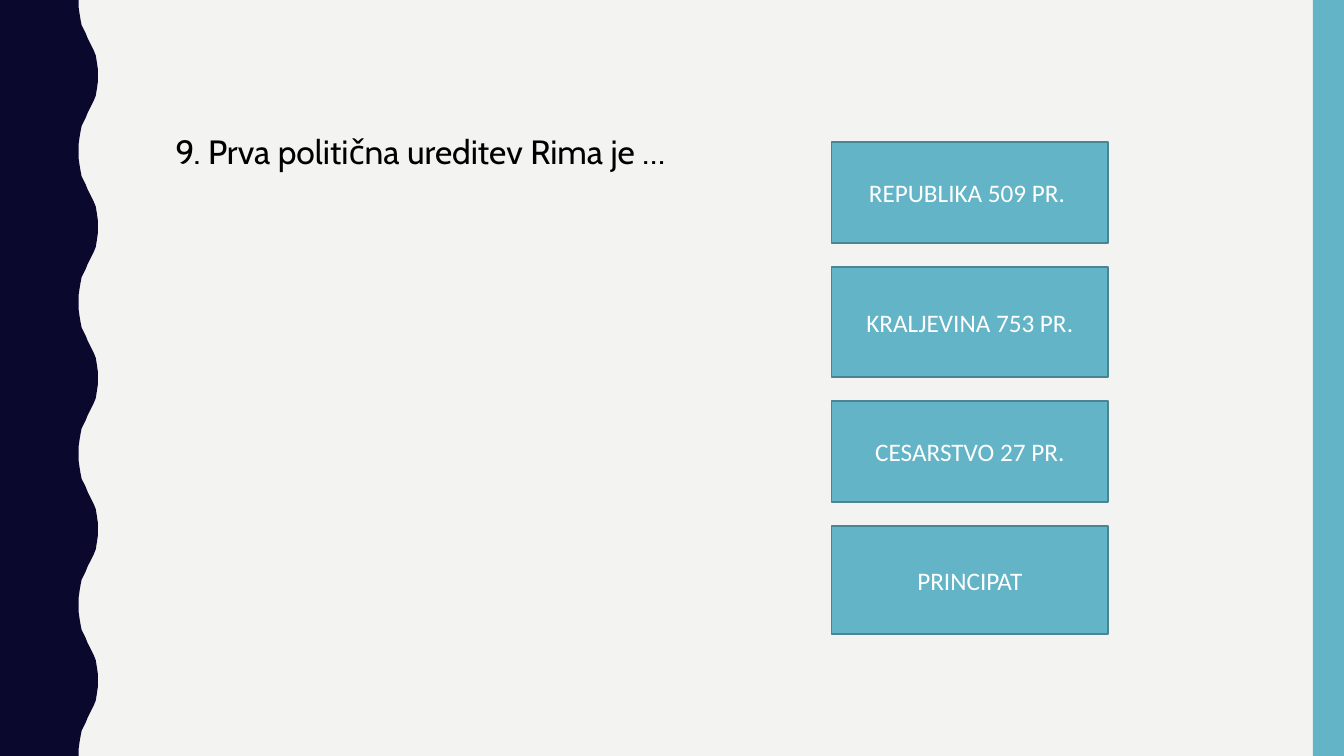
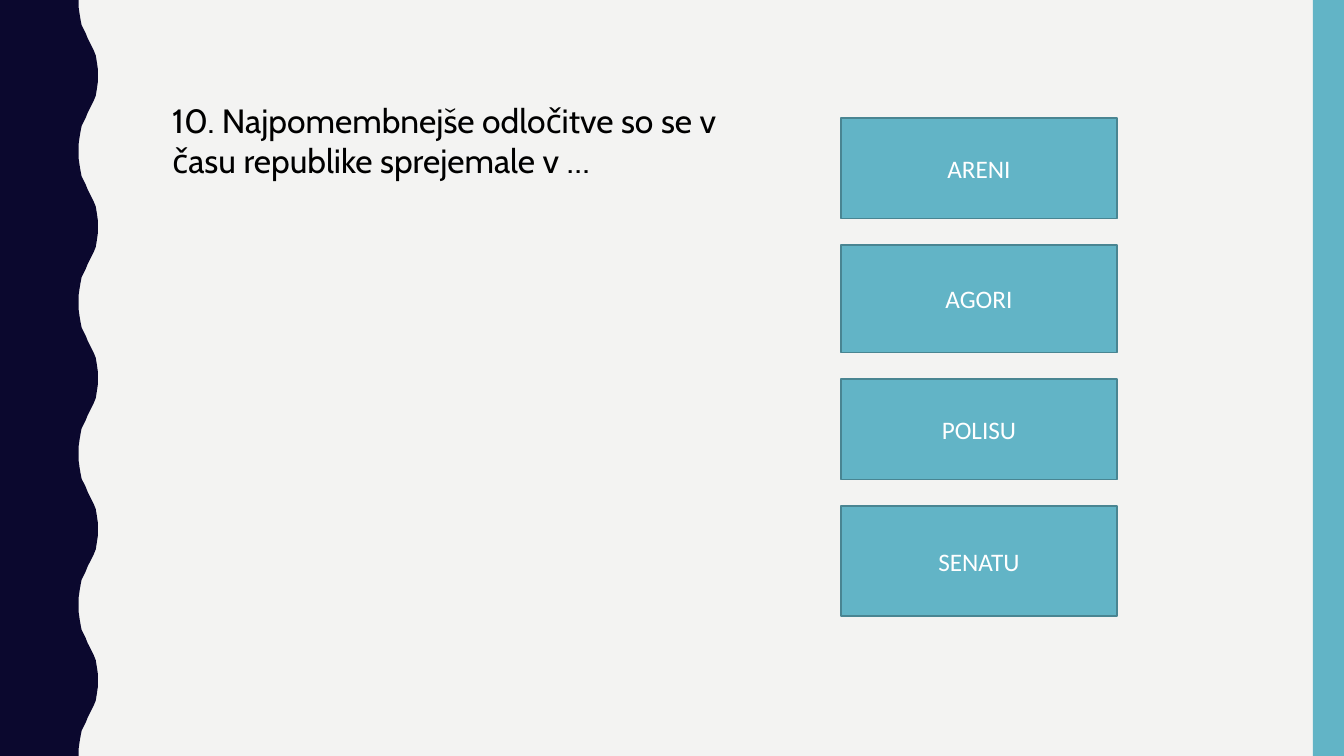
"""Build two quiz slides about the politics of ancient Rome."""
from pptx import Presentation
from pptx import util as u
from pptx.dml.color import RGBColor
from pptx.enum import shapes, text

PAPER = RGBColor(0xF3, 0xF3, 0xF2)
NAVY = RGBColor(0x0B, 0x08, 0x2E)
TEAL = RGBColor(0x62, 0xB4, 0xC6)
TEAL_DARK = RGBColor(0x49, 0x85, 0x92)
WHITE = RGBColor(0xFF, 0xFF, 0xFF)
BLACK = RGBColor(0x00, 0x00, 0x00)

WIDTH, HEIGHT = 13.33, 7.5
STRIP_WIDTH = 0.31
QUESTION_WIDTH = 6.14
ANSWER_WIDTH = 2.74

WAVE_PERIOD = 1.5
WAVE_COUNT = 5
WAVE_RISE = [
    (0.78, 0), (0.78, 0.07), (0.79, 0.14), (0.8, 0.2), (0.81, 0.25),
    (0.83, 0.29), (0.85, 0.33), (0.87, 0.38), (0.89, 0.42), (0.91, 0.46),
    (0.93, 0.5), (0.95, 0.55), (0.96, 0.61), (0.97, 0.68), (0.97, 0.75),
]
WAVE_FALL = [(x, WAVE_PERIOD - y) for x, y in reversed(WAVE_RISE[:-1])]

QUESTION_FONT = {"name": "Cabin", "size": u.Pt(24)}
ANSWER_FONT = {"name": "Calibri", "size": u.Pt(18)}
QUESTION_FRAME = {"word_wrap": True, "auto_size": text.MSO_AUTO_SIZE.SHAPE_TO_FIT_TEXT}
ANSWER_FRAME = {"word_wrap": True, "vertical_anchor": text.MSO_ANCHOR.MIDDLE}

QUIZ = [
    {
        "question": "9. Prva politična ureditev Rima je …",
        "question_box": (1.64, 1.25, 0.5),
        "answers": [("REPUBLIKA 509 PR. ", 1), ("KRALJEVINA 753 PR.", 1.09),
                    ("CESARSTVO 27 PR.", 1), ("PRINCIPAT", 1.07)],
        "answers_at": (8.25, 1.41),
        "gap": 0.24,
    },
    {
        "question": "10. Najpomembnejše odločitve so se v času republike sprejemale v …",
        "question_box": (1.61, 0.94, 0.91),
        "answers": [("ARENI", 1), ("AGORI", 1.07), ("POLISU", 1), ("SENATU", 1.09)],
        "answers_at": (8.34, 1.17),
        "gap": 0.26,
    },
]


def apply_format(target, values):
    """Set every attribute named in values on target."""
    for name, value in values.items():
        setattr(target, name, value)


class QuizDeck:
    """Hold the presentation, its style and the current slide."""

    def __init__(self):
        """Start a wide presentation with a paper background."""
        self.presentation = Presentation()
        self.presentation.slide_width = u.Inches(WIDTH)
        self.presentation.slide_height = u.Inches(HEIGHT)
        fill = self.presentation.slide_master.background.fill
        fill.solid()
        fill.fore_color.rgb = PAPER
        self.slide = None

    def add_slide(self):
        """Add a slide with the wave on the left and the strip on the right."""
        self.slide = self.presentation.slides.add_slide(self.presentation.slide_layouts[6])
        self.add_wave()
        self.add_rectangle(WIDTH - STRIP_WIDTH, 0, STRIP_WIDTH, HEIGHT)

    def paint(self, shape, color, line_color=None):
        """Give a shape a flat fill and an optional thin outline."""
        shape.shadow.inherit = False
        shape.fill.solid()
        shape.fill.fore_color.rgb = color
        if line_color is None:
            shape.line.fill.background()
        else:
            shape.line.color.rgb = line_color
            shape.line.width = u.Pt(1)

    def add_wave(self):
        """Draw the navy band with its wavy right edge."""
        edge = [(x, y + WAVE_PERIOD * index)
                for index in range(WAVE_COUNT) for x, y in WAVE_RISE + WAVE_FALL]
        points = [(u.Inches(x), u.Inches(y)) for x, y in edge + [(0, HEIGHT)]]
        builder = self.slide.shapes.build_freeform(0, 0)
        builder.add_line_segments(points, close=True)
        self.paint(builder.convert_to_shape(), NAVY)

    def add_rectangle(self, left, top, width, height, line_color=None):
        """Draw a teal rectangle and return it."""
        shape = self.slide.shapes.add_shape(
            shapes.MSO_SHAPE.RECTANGLE, *map(u.Inches, (left, top, width, height)))
        self.paint(shape, TEAL, line_color)
        return shape

    def add_wording(self, shape, wording, frame_format, font_format, color, alignment):
        """Put one formatted paragraph into a shape."""
        frame = shape.text_frame
        apply_format(frame, frame_format)
        paragraph = frame.paragraphs[0]
        paragraph.alignment = alignment
        run = paragraph.add_run()
        run.text = wording
        apply_format(run.font, font_format)
        run.font.color.rgb = color

    def add_question(self, wording, left, top, height):
        """Add the question text."""
        box = self.slide.shapes.add_textbox(
            *map(u.Inches, (left, top, QUESTION_WIDTH, height)))
        self.add_wording(box, wording, QUESTION_FRAME, QUESTION_FONT, BLACK,
                         text.PP_ALIGN.LEFT)

    def add_answers(self, answers, left, top, gap):
        """Stack the answer boxes with equal gaps."""
        for wording, height in answers:
            shape = self.add_rectangle(left, top, ANSWER_WIDTH, height, TEAL_DARK)
            self.add_wording(shape, wording, ANSWER_FRAME, ANSWER_FONT, WHITE,
                             text.PP_ALIGN.CENTER)
            top += height + gap


def main():
    """Build and save the quiz."""
    deck = QuizDeck()
    for item in QUIZ:
        deck.add_slide()
        deck.add_answers(item["answers"], *item["answers_at"], item["gap"])
        deck.add_question(item["question"], *item["question_box"])
    deck.presentation.save("out.pptx")


if __name__ == "__main__":
    main()
